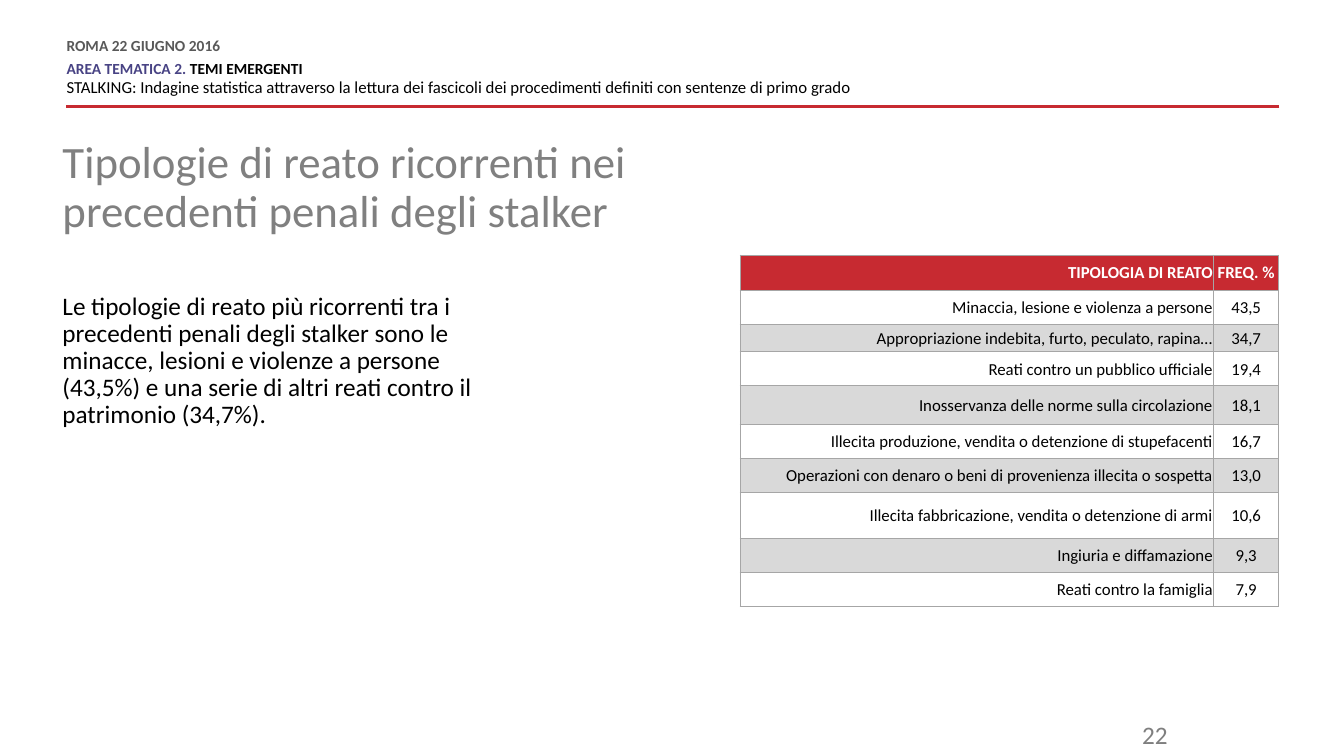
from dataclasses import dataclass

from lxml import etree
from pptx import Presentation
from pptx.dml.color import RGBColor
from pptx.enum.shapes import MSO_CONNECTOR
from pptx.enum.text import MSO_ANCHOR, PP_ALIGN
from pptx.oxml.ns import qn
from pptx.util import Inches, Pt

LEFT, MID, RIGHT = PP_ALIGN.LEFT, PP_ALIGN.CENTER, PP_ALIGN.RIGHT
CENTRE = MSO_ANCHOR.MIDDLE
STRAIGHT = MSO_CONNECTOR.STRAIGHT
WIDE, HIGH = Inches(13.33), Inches(7.5)


@dataclass(frozen=True)
class Theme:
    face: str = "Calibri"
    red: str = "C72A31"
    violet: str = "484384"
    black: str = "000000"
    white: str = "FFFFFF"
    dark: str = "595959"
    title: str = "808080"
    page: str = "7F7F7F"
    band: str = "D9D9D9"
    edge: str = "A6A6A6"
    small: int = 11
    cell: int = 12
    body: int = 18
    head: int = 32


LOOK = Theme()

CRIMES = [
    ("TIPOLOGIA DI REATO", "FREQ. %"),
    ("Minaccia, lesione e violenza a persone", "43,5"),
    ("Appropriazione indebita, furto, peculato, rapina…", "34,7"),
    ("Reati contro un pubblico ufficiale", "19,4"),
    ("Inosservanza delle norme sulla circolazione", "18,1"),
    ("Illecita produzione, vendita o detenzione di stupefacenti", "16,7"),
    ("Operazioni con denaro o beni di provenienza illecita o sospetta", "13,0"),
    ("Illecita fabbricazione, vendita o detenzione di armi", "10,6"),
    ("Ingiuria e diffamazione", "9,3"),
    ("Reati contro la famiglia", "7,9"),
]
# Column widths and row heights, in percent of the slide
COLS = (35.26, 4.8)
ROW = 4.53
ODD_ROWS = {0: 4.67, 2: 3.6, 4: 5.07, 7: 6}


def across(share):
    return round(WIDE * share / 100)


def down(share):
    return round(HIGH * share / 100)


def style(run, size, color, bold=False):
    font = run.font
    font.name, font.size, font.bold = LOOK.face, Pt(size), bold
    font.color.rgb = RGBColor.from_string(color)


def write(para, parts, align=LEFT, space=None, before=0, after=0):
    """Fill a paragraph with (text, size, colour, bold) parts."""
    para.alignment, para.line_spacing = align, space
    para.space_before, para.space_after = Pt(before), Pt(after)
    for text, *look in parts:
        run = para.add_run()
        run.text = text
        style(run, *look)


def add_box(slide, left, top, width, height, inset=0):
    box = slide.shapes.add_textbox(
        across(left), down(top), across(width), down(height))
    frame = box.text_frame
    frame.word_wrap = True
    if inset is not None:
        frame.margin_left = frame.margin_right = inset
        frame.margin_top = frame.margin_bottom = inset
    return frame


def add_rule(slide, left, right, top):
    line = slide.shapes.add_connector(
        STRAIGHT, across(right), down(top), across(left), down(top))
    line.line.color.rgb = RGBColor.from_string(LOOK.red)
    line.line.width = Pt(2)
    etree.SubElement(line._element.spPr, qn("a:effectLst"))


def add_edges(cell):
    props = cell._tc.get_or_add_tcPr()
    for side in ("lnL", "lnR", "lnT", "lnB"):
        edge = etree.SubElement(props, qn(f"a:{side}"), w=str(Pt(0.75)))
        fill = etree.SubElement(edge, qn("a:solidFill"))
        etree.SubElement(fill, qn("a:srgbClr"), val=LOOK.edge)


def fill_cell(cell, text, align, row):
    top = row == 0
    add_edges(cell)
    back = LOOK.red if top else LOOK.white if row % 2 else LOOK.band
    cell.fill.solid()
    cell.fill.fore_color.rgb = RGBColor.from_string(back)
    cell.vertical_anchor = CENTRE
    cell.margin_left = cell.margin_right = cell.margin_top = Inches(0.01)
    cell.margin_bottom = 0
    ink = LOOK.white if top else LOOK.black
    write(cell.text_frame.paragraphs[0], [(text, LOOK.cell, ink, top)], align)


def add_grid(slide, left, top):
    highs = [ODD_ROWS.get(row, ROW) for row in range(len(CRIMES))]
    table = slide.shapes.add_table(
        len(CRIMES), len(COLS), across(left), down(top),
        across(sum(COLS)), down(sum(highs))).table
    for col, share in zip(table.columns, COLS):
        col.width = across(share)
    for row, (share, texts) in enumerate(zip(highs, CRIMES)):
        table.rows[row].height = down(share)
        for col, (text, align) in enumerate(zip(texts, (RIGHT, MID))):
            fill_cell(table.cell(row, col), text, align, row)


def add_header(slide):
    frame = add_box(slide, 4.95, 5.2, 62.57, 7.87)
    lead = Pt(10.8)
    write(frame.paragraphs[0],
          [("ROMA 22 GIUGNO 2016", LOOK.small, LOOK.dark, True)],
          space=lead, after=6)
    write(frame.add_paragraph(),
          [("AREA TEMATICA 2. ", LOOK.small, LOOK.violet, True),
           ("TEMI EMERGENTI", LOOK.small, LOOK.black, True)], space=lead)
    write(frame.add_paragraph(),
          [("STALKING: Indagine statistica attraverso la lettura dei fascicoli "
            "dei procedimenti definiti con sentenze di primo grado",
            LOOK.cell, LOOK.black)], space=lead, before=3, after=6)


def main():
    deck = Presentation()
    deck.slide_width, deck.slide_height = WIDE, HIGH
    slide = deck.slides.add_slide(deck.slide_layouts[6])

    # Header band
    add_rule(slide, 4.95, 95.2, 14.13)
    add_header(slide)

    # Page number
    page = add_box(slide, 78.77, 94.53, 8.85, 4.67, inset=None)
    write(page.paragraphs[0], [("22", LOOK.body, LOOK.page)], RIGHT)

    # Comment and title
    note = add_box(slide, 4.65, 38.8, 33.38, 44.53)
    write(note.paragraphs[0],
          [("Le tipologie di reato più ricorrenti tra i precedenti penali degli "
            "stalker sono le minacce, lesioni e violenze a persone (43,5%) e una "
            "serie di altri reati contro il patrimonio (34,7%).",
            LOOK.body, LOOK.black)], space=0.9)
    title = add_box(slide, 4.65, 18.53, 42.54, 15.07)
    write(title.paragraphs[0],
          [("Tipologie di reato ricorrenti nei precedenti penali degli stalker",
            LOOK.head, LOOK.title)], space=0.9)

    # Table of crimes
    add_grid(slide, 55.06, 33.73)
    deck.save("out.pptx")


if __name__ == "__main__":
    main()
